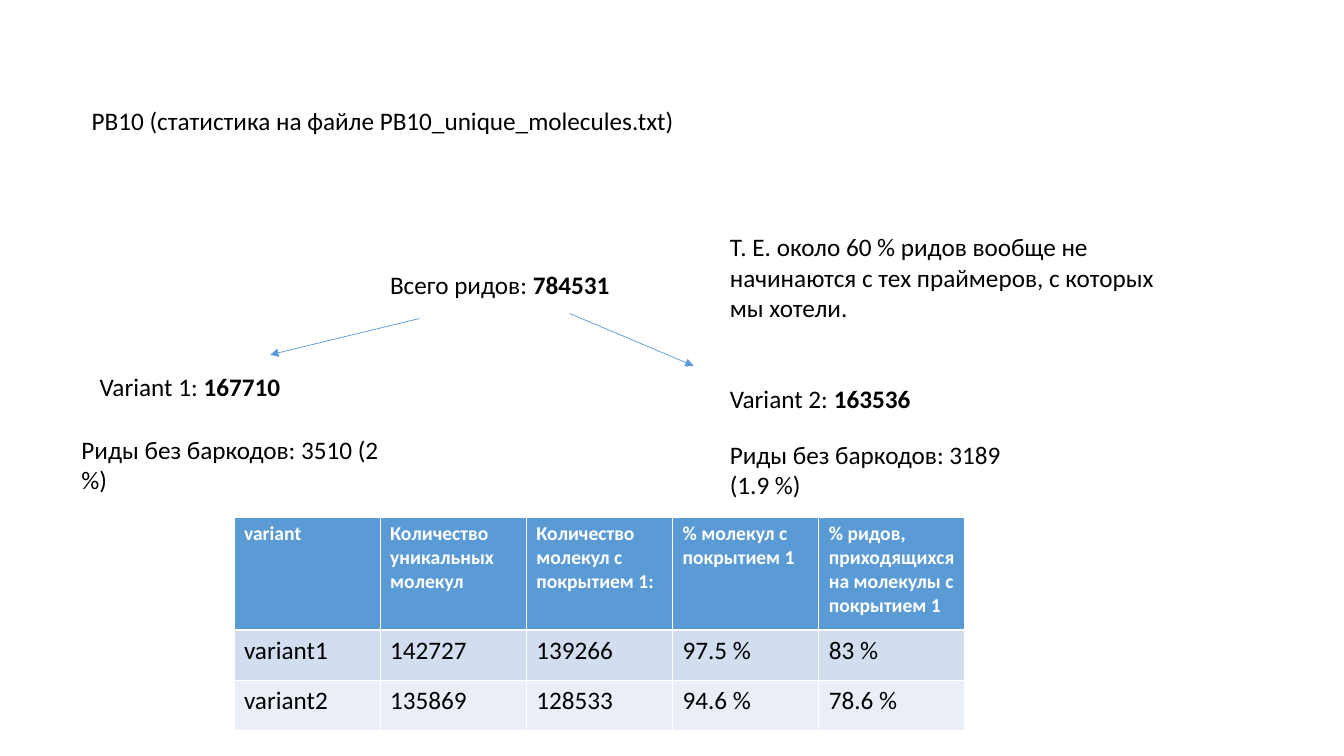
"""Build the PB10 read statistics slide."""
from dataclasses import dataclass
from lxml.etree import SubElement
from pptx import Presentation
from pptx.dml.color import RGBColor as Rgb
from pptx.enum.shapes import MSO_CONNECTOR as Link
from pptx.enum.text import MSO_ANCHOR as Anchor, MSO_AUTO_SIZE as Fit, PP_ALIGN as Align
from pptx.oxml.ns import qn
from pptx.util import Inches, Pt

TITLE = "PB10 (статистика на файле PB10_unique_molecules.txt)"
RIGHT = 7.14
WIDE = 3.27
NOTES = [
    ((3.77, 2.62, WIDE, 0.4), "Всего ридов: ", "784531"),
    ((0.89, 3.63, WIDE, 0.4), "Variant 1: ", "167710"),
    ((RIGHT, 3.75, WIDE, 0.4), "Variant 2: ", "163536"),
    ((RIGHT, 4.31, WIDE, 0.71), "Риды без баркодов: 3189 (1.9 %)", ""),
    ((0.71, 4.26, 3.23, 1.01), "Риды без баркодов: 3510 (2 %)", ""),
    ((RIGHT, 2.25, 4.43, 1.01), "Т. Е. около 60 % ридов вообще не начинаются "
     "с тех праймеров, с которых мы хотели.", ""),
]
ROWS = [
    ("variant", "Количество уникальных молекул", "Количество молекул с покрытием 1:",
     "% молекул с покрытием 1", "% ридов, приходящихся на молекулы с покрытием 1"),
    ("variant1", "142727", "139266", "97.5 %", "83 %"),
    ("variant2", "135869", "128533", "94.6 %", "78.6 %"),
]
TALL = (1.12, 0.5, 0.5)
COL = 1.45
ARROWS = [(4.16, 3.16, 2.68, 3.52), (5.65, 3.11, 6.88, 3.63)]


@dataclass(frozen=True)
class Theme:
    font: str = "Calibri"
    body: int = 18
    head: int = 14
    line: float = 0.5
    ink: str = "000000"
    pale: str = "FFFFFF"
    blue: str = "5B9BD5"
    fills: tuple = ("5B9BD5", "D2DEEF", "EAEFF7")


LOOK = Theme()


def style(run, size=LOOK.body, color=LOOK.ink, bold=False):
    font = run.font
    font.name, font.size, font.bold = LOOK.font, Pt(size), bold
    font.color.rgb = Rgb.from_string(color)


def place(shape, area):
    shape.left, shape.top, shape.width, shape.height = map(Inches, area)


def add_title(slide):
    title = slide.shapes.title
    place(title, (0.81, 0.49, 11.5, 1.45))
    frame = title.text_frame
    frame.text = TITLE
    frame.auto_size, frame.vertical_anchor = Fit.NONE, Anchor.MIDDLE
    para = frame.paragraphs[0]
    para.alignment, para.line_spacing = Align.LEFT, 0.9
    style(para.runs[0])


def add_note(slide, area, text, count):
    frame = slide.shapes.add_textbox(*map(Inches, area)).text_frame
    frame.word_wrap, frame.auto_size = True, Fit.SHAPE_TO_FIT_TEXT
    para = frame.paragraphs[0]
    for part, bold in ((text, False), (count, True)):
        if part:
            run = para.add_run()
            run.text = part
            style(run, bold=bold)


def add_grid(slide):
    size = len(ROWS[0])
    area = map(Inches, (2.32, 5.13, COL * size, sum(TALL)))
    table = slide.shapes.add_table(len(ROWS), size, *area).table
    for col in table.columns:
        col.width = Inches(COL)
    for r, (row, tall, fill) in enumerate(zip(ROWS, TALL, LOOK.fills)):
        table.rows[r].height = Inches(tall)
        for c, text in enumerate(row):
            cell = table.cell(r, c)
            cell.text = text
            cell.fill.solid()
            cell.fill.fore_color.rgb = Rgb.from_string(fill)
            run = cell.text_frame.paragraphs[0].runs[0]
            if r:
                style(run)
            else:
                style(run, LOOK.head, LOOK.pale, True)


def add_arrow(slide, ends):
    link = slide.shapes.add_connector(Link.STRAIGHT, *map(Inches, ends))
    link.line.width = Pt(LOOK.line)
    link.line.color.rgb = Rgb.from_string(LOOK.blue)
    props = link.element.spPr
    SubElement(props.find(qn("a:ln")), qn("a:tailEnd"), type="triangle")
    SubElement(props, qn("a:effectLst"))


def main():
    deck = Presentation()
    deck.slide_width, deck.slide_height = Inches(13.33), Inches(7.5)
    slide = deck.slides.add_slide(deck.slide_layouts[5])
    add_title(slide)
    for area, text, count in NOTES:
        add_note(slide, area, text, count)
    add_grid(slide)
    for ends in ARROWS:
        add_arrow(slide, ends)
    deck.save("out.pptx")


if __name__ == "__main__":
    main()
